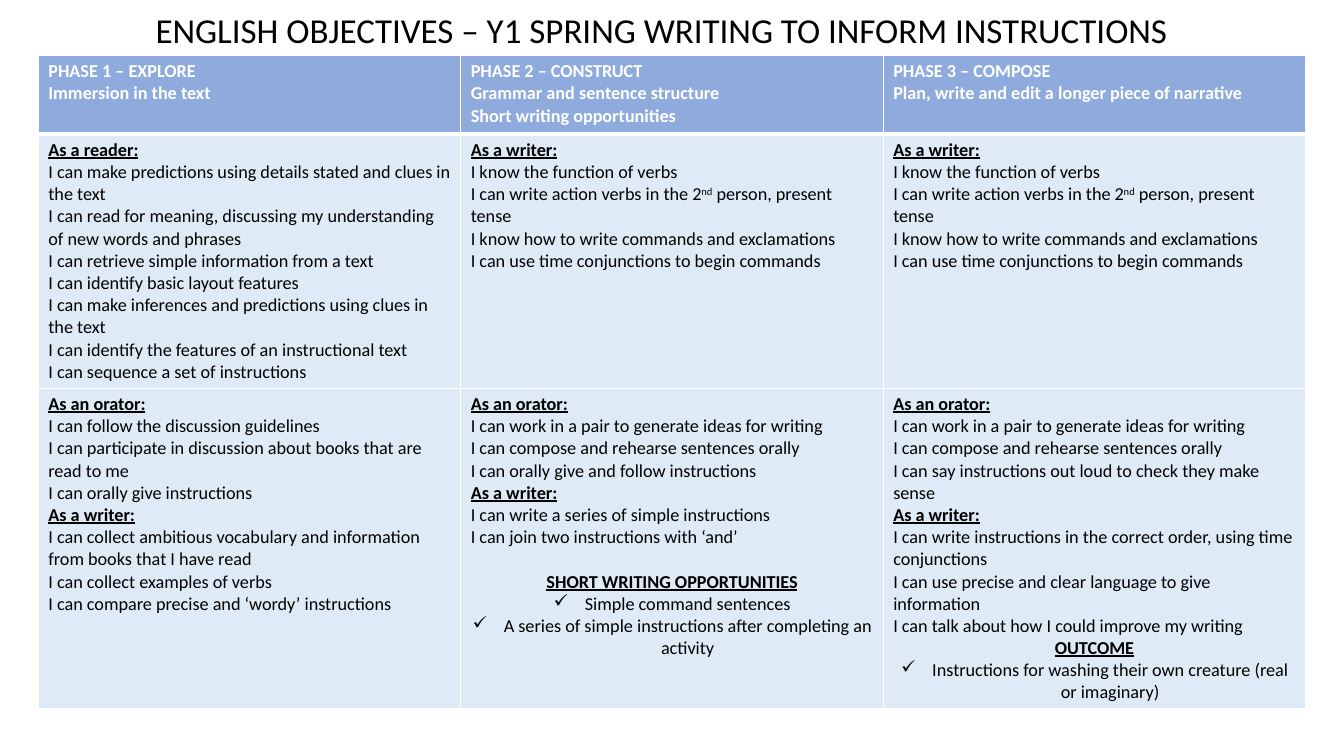
import pptx
import pptx.dml.color
import pptx.enum.text
import pptx.oxml
import pptx.oxml.ns
import pptx.util

PX = 9144  # EMU per px, 100 px to the inch
COLORS = {"header": "8FAADC", "body": "DEEBF7", "white": "FFFFFF", "black": "000000"}
FONT = "Calibri"
TITLE = "ENGLISH OBJECTIVES – Y1 SPRING WRITING TO INFORM INSTRUCTIONS"
ROW_HEIGHTS = [78, 249, 312]

# Line marks: "# " heading, "= " centred heading, "✓ " tick bullet, ^…^ superscript
WRITER = [
    "# As a writer:",
    "I know the function of verbs",
    "I can write action verbs in the 2^nd^ person, present tense",
    "I know how to write commands and exclamations",
    "I can use time conjunctions to begin commands",
]
ORATOR = [
    "# As an orator:",
    "I can work in a pair to generate ideas for writing",
    "I can compose and rehearse sentences orally",
]
ROWS = [
    [
        ["PHASE 1 – EXPLORE", "Immersion in the text"],
        ["PHASE 2 – CONSTRUCT", "Grammar and sentence structure",
         "Short writing opportunities"],
        ["PHASE 3 – COMPOSE", "Plan, write and edit a longer piece of narrative"],
    ],
    [
        ["# As a reader:",
         "I can make predictions using details stated and clues in the text",
         "I can read for meaning, discussing my understanding of new words and phrases",
         "I can retrieve simple information from a text",
         "I can identify basic layout features",
         "I can make inferences and predictions using clues in the text",
         "I can identify the features of an instructional text",
         "I can sequence a set of instructions"],
        WRITER,
        WRITER,
    ],
    [
        ["# As an orator:",
         "I can follow the discussion guidelines",
         "I can participate in discussion about books that are read to me",
         "I can orally give instructions",
         "# As a writer:",
         "I can collect ambitious vocabulary and information from books that I have read",
         "I can collect examples of verbs",
         "I can compare precise and ‘wordy’ instructions"],
        ORATOR + [
            "I can orally give and follow instructions",
            "# As a writer:",
            "I can write a series of simple instructions",
            "I can join two instructions with ‘and’",
            "= SHORT WRITING OPPORTUNITIES",
            "✓ Simple command sentences",
            "✓ A series of simple instructions after completing an activity"],
        ORATOR + [
            "I can say instructions out loud to check they make sense",
            "# As a writer:",
            "I can write instructions in the correct order, using time conjunctions",
            "I can use precise and clear language to give information",
            "I can talk about how I could improve my writing",
            "= OUTCOME",
            "✓ Instructions for washing their own creature (real or imaginary)"],
    ],
]


def px(n):
    return pptx.util.Emu(n * PX)


def rgb(name):
    return pptx.dml.color.RGBColor.from_string(COLORS[name])


def add_run(p, text, color, **fmt):
    r = p.add_run()
    r.text = text
    for name, value in {"name": FONT, **fmt}.items():
        setattr(r.font, name, value)
    r.font.color.rgb = rgb(color)
    return r


def add_xml(parent, xml, index=None):
    ns = pptx.oxml.ns.nsdecls("a")
    el = pptx.oxml.parse_xml(xml.replace("/>", f" {ns}/>", 1) if xml.endswith("/>")
                             else xml.replace(">", f" {ns}>", 1))
    parent.insert(len(parent) if index is None else index, el)


def add_line(p, line, header):
    mark = line[0] if line[:2] in ("# ", "= ", "✓ ") else ""
    heading = mark in ("#", "=") and mark != ""
    if mark in ("=", "✓") and mark:
        p.alignment = pptx.enum.text.PP_ALIGN.CENTER
    if mark == "✓":
        pPr = p._p.get_or_add_pPr()
        pPr.set("marL", str(px(31)))
        pPr.set("indent", str(-px(31)))
        add_xml(pPr, '<a:buChar char="✓"/>')
    text = line[2:] if mark else line
    for i, part in enumerate(text.split("^")):
        r = add_run(p, part, "white" if header else "black", size=pptx.util.Pt(13),
                    bold=header or heading, underline=heading)
        if i % 2:
            r._r.get_or_add_rPr().set("baseline", "30000")


def fill_cell(cell, lines, row):
    header = row == 0
    cell.fill.solid()
    cell.fill.fore_color.rgb = rgb("header" if header else "body")
    # Borders come before the fill in the cell properties
    widths = {"L": 1, "R": 1, "T": 3 if row == 1 else 1, "B": 3 if header else 1}
    for i, (side, width) in enumerate(widths.items()):
        add_xml(cell._tc.get_or_add_tcPr(),
                f'<a:ln{side} w="{pptx.util.Pt(width)}"><a:solidFill>'
                f'<a:srgbClr val="{COLORS["white"]}"/></a:solidFill></a:ln{side}>', i)
    tf = cell.text_frame
    for i, line in enumerate(lines):
        p = tf.paragraphs[0] if i == 0 else tf.add_paragraph()
        add_line(p, line, header)
        if line.startswith("= SHORT"):
            p.space_before = pptx.util.Pt(16)


def add_title(slide, x, y, w, h):
    sp = slide.shapes.title
    for name, value in {"left": x, "top": y, "width": w, "height": h}.items():
        setattr(sp, name, px(value))
    tf = sp.text_frame
    for name, value in {"word_wrap": True,
                        "auto_size": pptx.enum.text.MSO_AUTO_SIZE.NONE,
                        "vertical_anchor": pptx.enum.text.MSO_ANCHOR.MIDDLE}.items():
        setattr(tf, name, value)
    p = tf.paragraphs[0]
    p.alignment = pptx.enum.text.PP_ALIGN.CENTER
    add_run(p, TITLE, "black", size=pptx.util.Pt(25))


def add_objectives(slide, x, y, w):
    n = len(ROWS[0])
    table = slide.shapes.add_table(len(ROWS), n, px(x), px(y), px(w),
                                   px(sum(ROW_HEIGHTS))).table
    table.horz_banding = False
    for col in table.columns:
        col.width = px(w // n)
    for i, cells in enumerate(ROWS):
        table.rows[i].height = px(ROW_HEIGHTS[i])
        for j, lines in enumerate(cells):
            fill_cell(table.cell(i, j), lines, i)


def main():
    prs = pptx.Presentation()
    prs.slide_width, prs.slide_height = px(1333), px(750)
    slide = prs.slides.add_slide(prs.slide_layouts[5])
    add_title(slide, 70, 3, 1172, 52)
    add_objectives(slide, 38, 55, 1257)
    prs.save("out.pptx")


if __name__ == "__main__":
    main()
